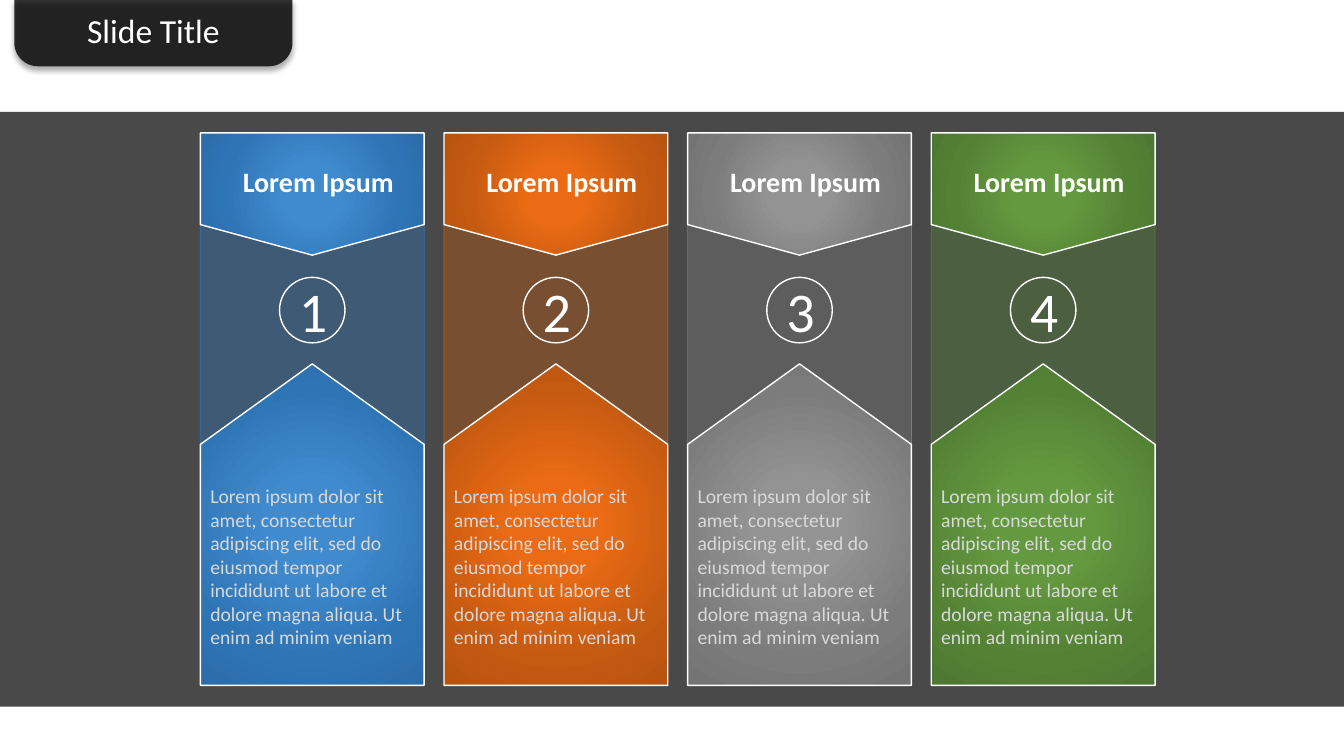
"""Build a slide of four numbered columns on a dark band under a title tab."""
from dataclasses import dataclass

from lxml import etree
from pptx import Presentation
from pptx.dml.color import RGBColor
from pptx.enum.shapes import MSO_SHAPE
from pptx.enum.text import MSO_ANCHOR, MSO_AUTO_SIZE, PP_ALIGN
from pptx.oxml import parse_xml
from pptx.oxml.ns import nsdecls, qn
from pptx.util import Cm, Pt

RECTANGLE, OVAL = MSO_SHAPE.RECTANGLE, MSO_SHAPE.OVAL
TAB = MSO_SHAPE.ROUND_2_SAME_RECTANGLE
LEFT, CENTER = PP_ALIGN.LEFT, PP_ALIGN.CENTER
TOP, MIDDLE = MSO_ANCHOR.TOP, MSO_ANCHOR.MIDDLE
GROW = MSO_AUTO_SIZE.SHAPE_TO_FIT_TEXT

TITLE = "Slide Title"
BODY = ("Lorem ipsum dolor sit amet, consectetur adipiscing elit, sed do eiusmod "
        "tempor incididunt ut labore et dolore magna aliqua. Ut enim ad minim veniam")
COLUMNS = [
    {"number": "1", "heading": "Lorem Ipsum", "body": BODY,
     "ribbon": "2E75B5", "shades": ("408BCE", "2E75B6", "2B6DA9")},
    {"number": "2", "heading": "Lorem Ipsum", "body": BODY,
     "ribbon": "C15811", "shades": ("EA6B14", "C55A11", "B85410")},
    {"number": "3", "heading": "Lorem Ipsum", "body": BODY,
     "ribbon": "7C7C7C", "shades": ("939393", "7C7C7C", "747474")},
    {"number": "4", "heading": "Lorem Ipsum", "body": BODY,
     "ribbon": "538135", "shades": ("649A3F", "548235", "4E7932")},
]

SLIDE_WIDTH, SLIDE_HEIGHT = 33.87, 19.05
COLUMN_LEFT, COLUMN_PITCH, COLUMN_WIDTH = 5.05, 6.14, 5.64
MID = COLUMN_WIDTH / 2
CIRCLE_TOP, CIRCLE_SIZE = 6.99, 1.65
RIBBON = [(0, 4.95), (0, 5.54), (MID, 6.4), (COLUMN_WIDTH, 5.54),
          (COLUMN_WIDTH, 11.61), (MID, 9.37), (0, 11.61), (0, 12.29)]
HEAD = [(0, 3.35), (COLUMN_WIDTH, 3.35), (COLUMN_WIDTH, 5.66), (MID, 6.43), (0, 5.66)]
BASE = [(0, 17.27), (0, 11.2), (MID, 9.17), (COLUMN_WIDTH, 11.2), (COLUMN_WIDTH, 17.27)]


@dataclass(frozen=True)
class Theme:
    font: str = "Calibri"
    white: str = "FFFFFF"
    body: str = "D9D9D9"
    band: str = "0D0D0D"
    tab: str = "000000"
    title_size: int = 24
    heading_size: int = 20
    number_size: int = 40
    body_size: int = 14


THEME = Theme()


def lengths(*values):
    return [Cm(value) for value in values]


def shadow_xml(blur, distance, angle):
    return parse_xml(
        f'<a:effectLst {nsdecls("a")}><a:outerShdw blurRad="{Pt(blur)}" '
        f'dist="{Pt(distance)}" dir="{angle * 60000}" algn="t" rotWithShape="0">'
        '<a:srgbClr val="000000"><a:alpha val="40000"/></a:srgbClr>'
        '</a:outerShdw></a:effectLst>')


def fill_solid(shape, color, opacity):
    shape.fill.solid()
    shape.fill.fore_color.rgb = RGBColor.from_string(color)
    tint = shape.fill._xPr.find(qn("a:solidFill"))[0]
    etree.SubElement(tint, qn("a:alpha")).set("val", str(opacity * 1000))


def fill_radial(shape, shades):
    light, middle, dark = shades
    stops = "".join(
        f'<a:gs pos="{position * 1000}"><a:srgbClr val="{color}"/></a:gs>'
        for position, color in ((0, light), (23, light), (69, middle), (97, dark)))
    shape.fill.background()
    blank = shape.fill._xPr.find(qn("a:noFill"))
    blank.getparent().replace(blank, parse_xml(
        f'<a:gradFill {nsdecls("a")} rotWithShape="1"><a:gsLst>{stops}</a:gsLst>'
        '<a:path path="circle"><a:fillToRect l="50000" t="50000" r="50000" b="50000"/>'
        '</a:path></a:gradFill>'))


def set_line(shape, color, width):
    shape.line.color.rgb = RGBColor.from_string(color)
    shape.line.width = Pt(width)


def set_text(shape, text, size, color, align, anchor=TOP, bold=False):
    frame = shape.text_frame
    frame.word_wrap = True
    frame.vertical_anchor = anchor
    frame.text = text
    para = frame.paragraphs[0]
    para.alignment = align
    span = para.runs[0]
    span.font.name = THEME.font
    span.font.size = Pt(size)
    span.font.bold = bold
    span.font.color.rgb = RGBColor.from_string(color)
    return span


def add_plain(page, kind, *box):
    shape = page.shapes.add_shape(kind, *lengths(*box))
    shape.shadow.inherit = False
    shape.line.fill.background()
    return shape


def add_outline(page, left, points):
    corners = [tuple(lengths(left + x, y)) for x, y in points]
    builder = page.shapes.build_freeform(*corners[0])
    builder.add_line_segments(corners[1:], close=True)
    shape = builder.convert_to_shape()
    shape.shadow.inherit = False
    return shape


def add_label(page, box, *text):
    label = page.shapes.add_textbox(*lengths(*box))
    span = set_text(label, *text)
    label.text_frame.auto_size = GROW
    return span


def add_column(page, left, column):
    ribbon = add_outline(page, left, RIBBON)
    fill_solid(ribbon, column["ribbon"], 40)
    set_line(ribbon, column["shades"][1], 0.5)

    circle = add_plain(page, OVAL, left + MID - CIRCLE_SIZE / 2, CIRCLE_TOP,
                       CIRCLE_SIZE, CIRCLE_SIZE)
    circle.fill.background()
    set_line(circle, THEME.white, 1)
    set_text(circle, column["number"], THEME.number_size, THEME.white, CENTER, MIDDLE)

    for points in (HEAD, BASE):
        panel = add_outline(page, left, points)
        fill_radial(panel, column["shades"])
        set_line(panel, THEME.white, 1)

    heading = add_label(page, (left + 0.15, 4.01, COLUMN_WIDTH, 1.12), column["heading"],
                        THEME.heading_size, THEME.white, CENTER, TOP, True)
    heading.font.fill._xPr.find(qn("a:solidFill")).addnext(shadow_xml(3, 3, 45))
    add_label(page, (left, 12.07, COLUMN_WIDTH, 4.45), column["body"],
              THEME.body_size, THEME.body, LEFT)


def add_title(page):
    tab = add_plain(page, TAB, 0.36, -0.03, 7.01, 1.7)
    tab.rotation = 180
    tab.adjustments[0], tab.adjustments[1] = 0.35, 0
    fill_solid(tab, THEME.tab, 80)
    effects = tab._element.spPr.find(qn("a:effectLst"))
    effects.getparent().replace(effects, shadow_xml(4, 3, 90))

    title = page.shapes.title
    title.left, title.top, title.width, title.height = lengths(0.36, 0.13, 7.01, 1.28)
    set_text(title, TITLE, THEME.title_size, THEME.white, CENTER)
    title.text_frame.auto_size = GROW
    tab._element.addnext(title._element)


def main():
    deck = Presentation()
    deck.slide_width, deck.slide_height = lengths(SLIDE_WIDTH, SLIDE_HEIGHT)
    page = deck.slides.add_slide(deck.slide_layouts.get_by_name("Title Only"))
    band = add_plain(page, RECTANGLE, 0, 2.82, SLIDE_WIDTH, 14.99)
    fill_solid(band, THEME.band, 75)
    for index, column in enumerate(COLUMNS):
        add_column(page, COLUMN_LEFT + index * COLUMN_PITCH, column)
    add_title(page)
    deck.save("out.pptx")


if __name__ == "__main__":
    main()
